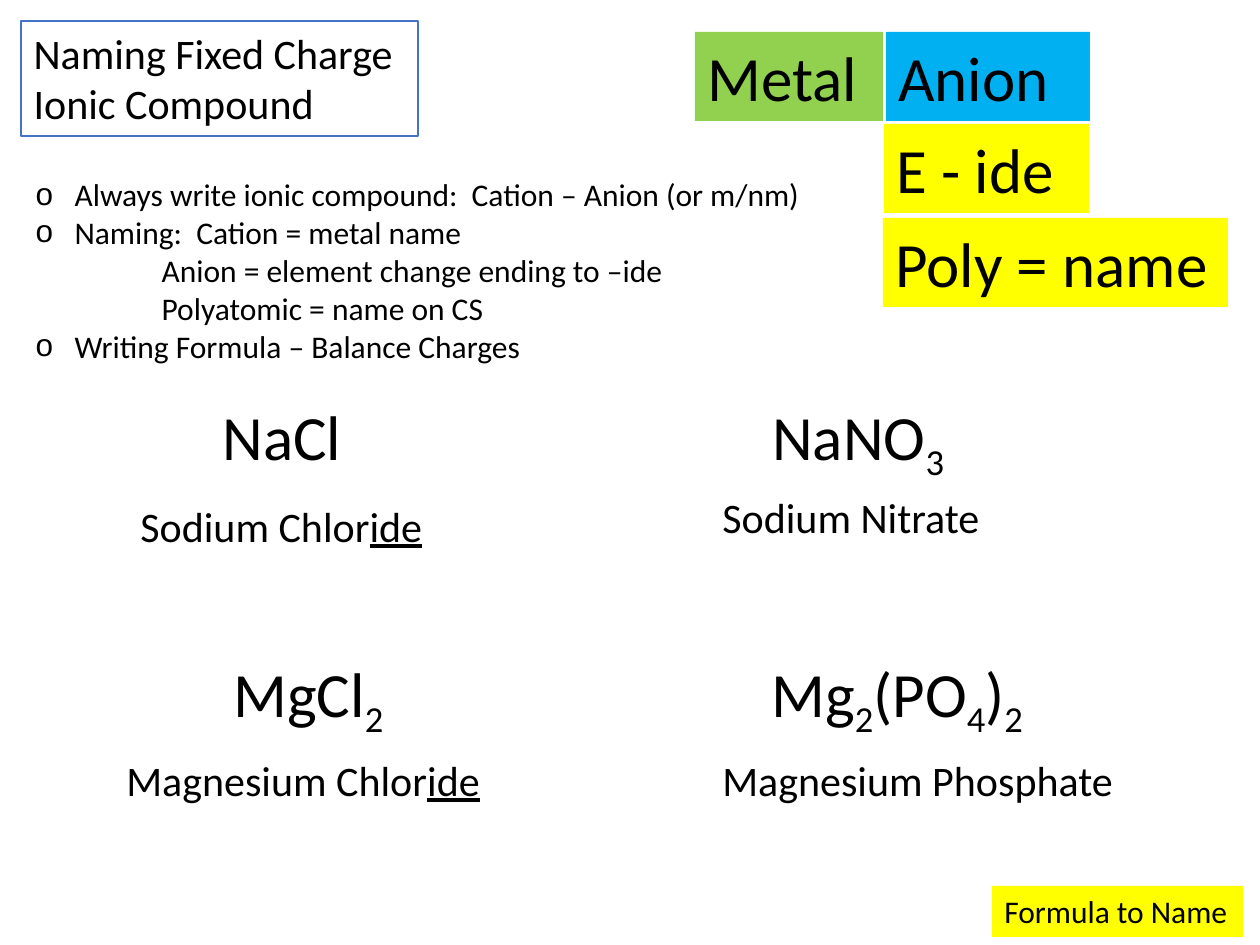
import pptx
import pptx.util
import pptx.dml.color
import pptx.enum.shapes
import pptx.enum.text
import lxml.etree

PX = 914400 // 126
FONT = "Calibri"
COLORS = {"text": "000000", "white": "FFFFFF", "outline": "4472C4",
          "metal": "92D050", "anion": "00B0F0", "rule": "FFFF00"}

TITLE = ["Naming Fixed Charge", "Ionic Compound"]
TITLE_BOX = (21, 21, 397, 115)

# (text, has a bullet)
NOTES = [
    ("Always write ionic compound:  Cation – Anion (or m/nm)", True),
    ("Naming:  Cation = metal name", True),
    ("Anion = element change ending to –ide", False),
    ("Polyatomic = name on CS", False),
    ("Writing Formula – Balance Charges", True),
]
NOTES_BOX = (23, 169, 799, 204)
BULLET_INDENT, SUBLINE_INDENT = 39, 126

# Formula parts and names as (text, style); boxes as (left, top, width)
COMPOUNDS = [
    ([("NaCl", "")], (210, 391, 146),
     [("Sodium Chlor", ""), ("ide", "underline")], (128, 494, 310)),
    ([("NaNO", ""), ("3", "sub")], (760, 391, 202),
     [("Sodium Nitrate", "")], (710, 485, 285)),
    ([("MgCl", ""), ("2", "sub")], (221, 648, 180),
     [("Magnesium Chlor", ""), ("ide", "underline")], (114, 748, 382)),
    ([("Mg", ""), ("2", "sub"), ("(PO", ""), ("4", "sub"), (")", ""), ("2", "sub")],
     (759, 648, 287),
     [("Magnesium Phosphate", "")], (710, 748, 420)),
]
FORMULA_HEIGHT, NAME_HEIGHT = 89, 63

# (text, size, fill, box)
LABELS = [
    ("Formula to Name", 18, "rule", (992, 886, 251, 51)),
    ("Anion", 36, "anion", (886, 32, 204, 89)),
    ("Metal", 36, "metal", (695, 32, 188, 89)),
    ("E - ide", 36, "rule", (884, 124, 205, 89)),
    ("Poly = name", 36, "rule", (883, 218, 345, 89)),
]


def rgb(name):
    return pptx.dml.color.RGBColor.from_string(COLORS[name])


def place(shape, box):
    shape.left, shape.top, shape.width, shape.height = (value * PX for value in box)


def format_text(shape, size):
    """Set the frame and font that all text on the slide shares."""
    frame = shape.text_frame
    frame.word_wrap = False
    frame.auto_size = pptx.enum.text.MSO_AUTO_SIZE.NONE
    frame.vertical_anchor = pptx.enum.text.MSO_ANCHOR.TOP
    for paragraph in frame.paragraphs:
        paragraph.alignment = pptx.enum.text.PP_ALIGN.LEFT
        paragraph.space_before = pptx.util.Pt(0)
        paragraph.font.name = FONT
        paragraph.font.size = pptx.util.Pt(size)
        paragraph.font.color.rgb = rgb("text")


def set_bullet(paragraph, bulleted):
    properties = paragraph._p.get_or_add_pPr()
    indent = BULLET_INDENT if bulleted else SUBLINE_INDENT
    properties.set("marL", str(indent * PX))
    properties.set("indent", str(-indent * PX if bulleted else 0))
    tag = "a:buChar" if bulleted else "a:buNone"
    bullet = lxml.etree.Element(pptx.oxml.ns.qn(tag))
    if bulleted:
        bullet.set("char", "o")
    properties.insert_element_before(bullet, "a:tabLst", "a:defRPr", "a:extLst")


def add_text(slide, parts, size, box):
    shape = slide.shapes.add_textbox(0, 0, 0, 0)
    place(shape, box)
    for text, style in parts:
        run = shape.text_frame.paragraphs[0].add_run()
        run.text = text
        if style == "underline":
            run.font.underline = True
        elif style == "sub":
            run._r.get_or_add_rPr().set("baseline", "-25000")
    format_text(shape, size)


def add_label(slide, text, size, fill, box):
    shape = slide.shapes.add_shape(pptx.enum.shapes.MSO_SHAPE.RECTANGLE, 0, 0, 0, 0)
    place(shape, box)
    shape.shadow.inherit = False
    shape.fill.solid()
    shape.fill.fore_color.rgb = rgb(fill)
    shape.line.fill.background()
    shape.text_frame.text = text
    format_text(shape, size)


def main():
    presentation = pptx.Presentation()
    presentation.slide_width = pptx.util.Inches(10)
    presentation.slide_height = pptx.util.Inches(7.5)
    slide = presentation.slides.add_slide(presentation.slide_layouts[1])

    title, notes = slide.shapes.title, slide.placeholders[1]
    place(title, TITLE_BOX)
    title.text_frame.text = "\n".join(TITLE)
    format_text(title, 24)
    title.fill.solid()
    title.fill.fore_color.rgb = rgb("white")
    title.line.color.rgb = rgb("outline")
    title.line.width = pptx.util.Pt(1)

    place(notes, NOTES_BOX)
    notes.text_frame.text = "\n".join(text for text, _ in NOTES)
    format_text(notes, 18)
    for paragraph, (_, bulleted) in zip(notes.text_frame.paragraphs, NOTES):
        set_bullet(paragraph, bulleted)

    for formula, formula_box, name, name_box in COMPOUNDS:
        add_text(slide, formula, 36, (*formula_box, FORMULA_HEIGHT))
        add_text(slide, name, 24, (*name_box, NAME_HEIGHT))
    for label in LABELS:
        add_label(slide, *label)

    presentation.save("out.pptx")


if __name__ == "__main__":
    main()
